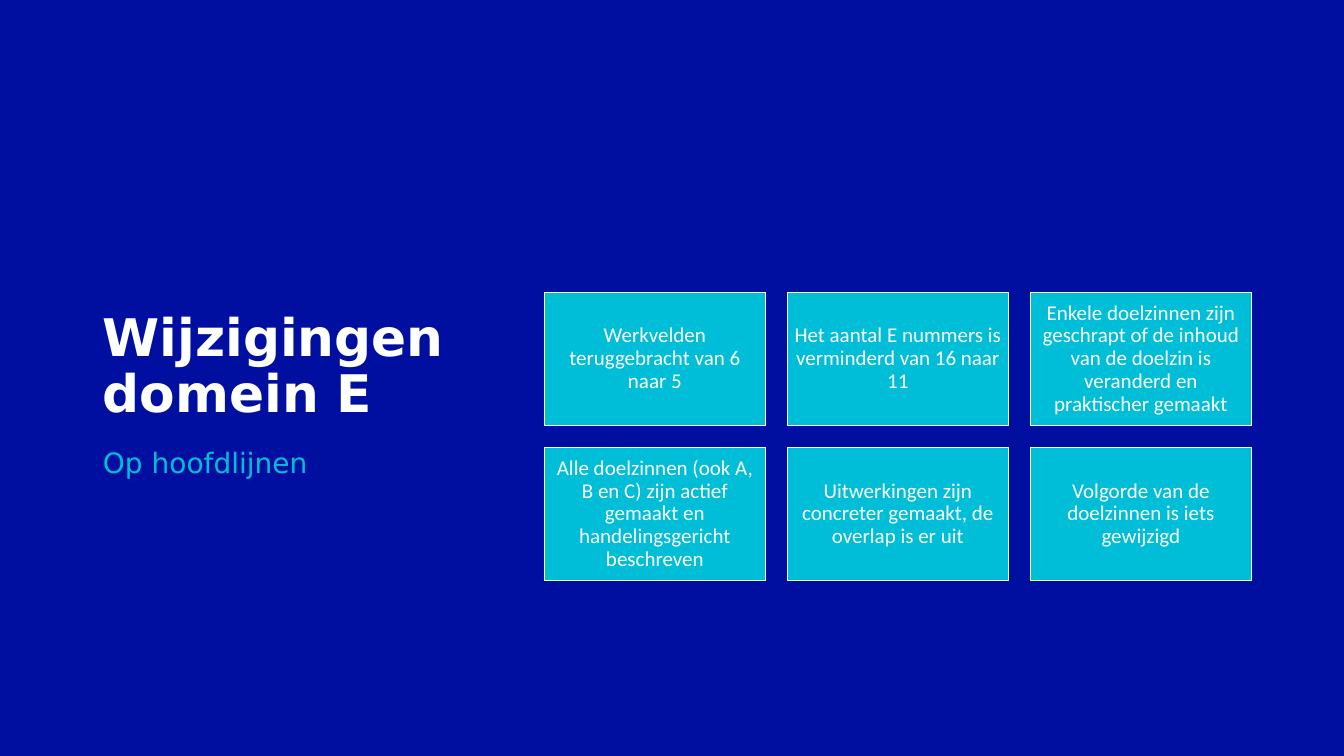
from lxml import etree
from pptx import Presentation
from pptx.dml.color import RGBColor
from pptx.enum.shapes import MSO_SHAPE
from pptx.enum.text import MSO_ANCHOR, MSO_AUTO_SIZE, PP_ALIGN
from pptx.oxml.ns import qn
from pptx.util import Inches, Pt

NAVY = RGBColor(0x00, 0x0F, 0xA0)
CYAN = RGBColor(0x00, 0xBE, 0xD7)
WHITE = RGBColor(0xFE, 0xFF, 0xFF)
RECTANGLE = MSO_SHAPE.RECTANGLE
TOP, MIDDLE, BOTTOM = MSO_ANCHOR.TOP, MSO_ANCHOR.MIDDLE, MSO_ANCHOR.BOTTOM
LEFT, CENTER = PP_ALIGN.LEFT, PP_ALIGN.CENTER
NO_AUTOFIT = MSO_AUTO_SIZE.NONE

CHANGES = [
    "Werkvelden teruggebracht van 6 naar 5",
    "Het aantal E nummers is verminderd van 16 naar 11",
    "Enkele doelzinnen zijn geschrapt of de inhoud van de doelzin is veranderd en praktischer gemaakt",
    "Alle doelzinnen (ook A, B en C) zijn actief gemaakt en handelingsgericht beschreven",
    "Uitwerkingen zijn concreter gemaakt, de overlap is er uit",
    "Volgorde van de doelzinnen is iets gewijzigd",
]
COLUMNS = 3
GRID_LEFT, GRID_TOP = 5.4, 2.9
CARD_WIDTH, CARD_HEIGHT, GAP = 2.19, 1.32, 0.22


def place(shape, left, top, width, height):
    shape.left, shape.top = Inches(left), Inches(top)
    shape.width, shape.height = Inches(width), Inches(height)


def write(shape, text, anchor, alignment, font_name, size, color, bold=False):
    """Put one formatted run in the shape and return its paragraph."""
    frame = shape.text_frame
    frame.word_wrap = True
    frame.auto_size = NO_AUTOFIT
    frame.vertical_anchor = anchor
    paragraph = frame.paragraphs[0]
    paragraph.alignment = alignment
    paragraph.line_spacing = 0.9
    paragraph.space_before = Pt(0)
    run = paragraph.add_run()
    run.text = text
    run.font.name = font_name
    run.font.size = Pt(size)
    run.font.bold = bold
    run.font.color.rgb = color
    return paragraph


presentation = Presentation()
presentation.slide_width = Inches(13.33)
presentation.slide_height = Inches(7.5)
slide = presentation.slides.add_slide(presentation.slide_layouts[1])
slide.background.fill.solid()
slide.background.fill.fore_color.rgb = NAVY

title = slide.shapes.title
place(title, 0.92, 2.15, 4.07, 2.1)
write(title, "Wijzigingen domein E", BOTTOM, LEFT, "DejaVu Sans", 37, WHITE, bold=True)

subtitle = slide.placeholders[1]
place(subtitle, 0.92, 4.41, 4.07, 2.1)
paragraph = write(subtitle, "Op hoofdlijnen", TOP, LEFT, "DejaVu Sans", 20, CYAN)
properties = paragraph._p.get_or_add_pPr()
properties.set("marL", "0")
properties.set("indent", "0")
etree.SubElement(properties, qn("a:buNone"))

for index, change in enumerate(CHANGES):
    row, column = divmod(index, COLUMNS)
    card = slide.shapes.add_shape(
        RECTANGLE,
        Inches(GRID_LEFT + column * (CARD_WIDTH + GAP)),
        Inches(GRID_TOP + row * (CARD_HEIGHT + GAP)),
        Inches(CARD_WIDTH),
        Inches(CARD_HEIGHT),
    )
    card.shadow.inherit = False
    card.fill.solid()
    card.fill.fore_color.rgb = CYAN
    card.line.color.rgb = WHITE
    card.line.width = Pt(1)
    frame = card.text_frame
    frame.margin_left = frame.margin_right = Inches(0.06)
    frame.margin_top = frame.margin_bottom = Inches(0.06)
    write(card, change, MIDDLE, CENTER, "Calibri", 15, WHITE)

presentation.save("out.pptx")
